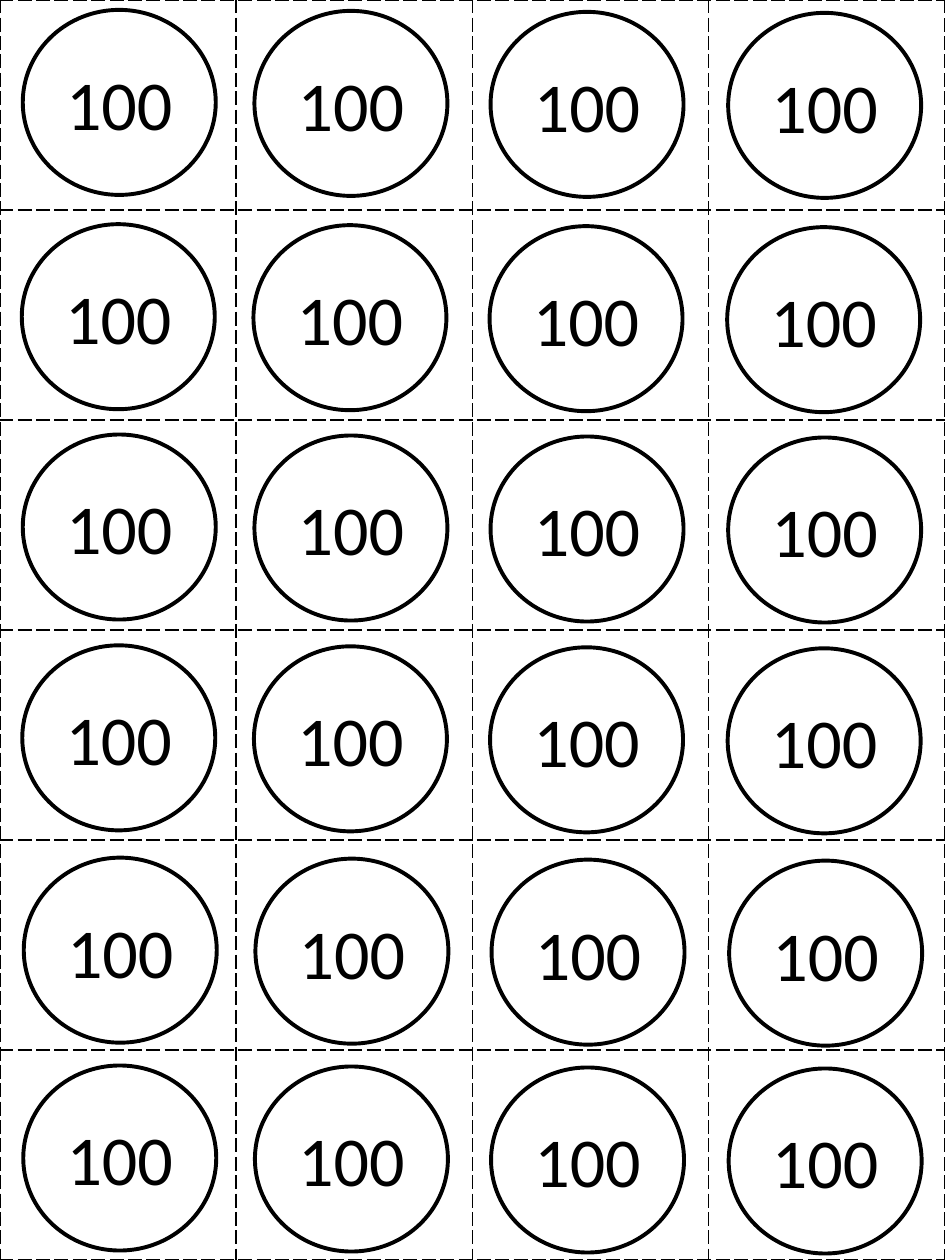
from dataclasses import dataclass
from itertools import product

from lxml.etree import SubElement
from pptx import Presentation
from pptx.dml.color import RGBColor
from pptx.enum.shapes import MSO_SHAPE as Shape
from pptx.enum.text import MSO_ANCHOR as Anchor, PP_ALIGN as Align
from pptx.oxml.ns import qn
from pptx.slide import Slide
from pptx.table import _Cell as Cell
from pptx.util import Cm, Pt


@dataclass(frozen=True)
class Theme:
    ink: str = "000000"
    paper: str = "FFFFFF"
    font: str = "Calibri"
    number_size: float = 40
    outline: float = 2.25
    cut_line: float = 1


@dataclass(frozen=True)
class CounterRow:
    top: float
    nudge: float


THEME = Theme()
PAGE_WIDTH, PAGE_HEIGHT = 19.05, 25.4
COUNTER_WIDTH, COUNTER_HEIGHT = 3.89, 3.73
COLUMN_DROP = 0.02
COLUMN_LEFTS = (0.46, 5.13, 9.89, 14.68)
ROWS = (
    CounterRow(0.2, 0),
    CounterRow(4.52, -0.02),
    CounterRow(8.76, 0),
    CounterRow(13.01, -0.01),
    CounterRow(17.29, 0.02),
    CounterRow(21.48, 0.01),
)


def dash_borders(cell: Cell) -> None:
    properties = cell._tc.get_or_add_tcPr()
    for side in ("lnL", "lnR", "lnT", "lnB"):
        line = SubElement(properties, qn(f"a:{side}"), w=str(Pt(THEME.cut_line)))
        fill = SubElement(line, qn("a:solidFill"))
        SubElement(fill, qn("a:srgbClr"), val=THEME.ink)
        SubElement(line, qn("a:prstDash"), val="lgDash")


def add_cut_grid(page: Slide) -> None:
    grid = page.shapes.add_table(
        len(ROWS), len(COLUMN_LEFTS), 0, 0, Cm(PAGE_WIDTH), Cm(PAGE_HEIGHT)
    ).table
    grid.first_row = False
    grid.horz_banding = False
    for cell in grid.iter_cells():
        dash_borders(cell)
        cell.fill.background()


def add_counter(page: Slide, left: float, top: float, text: str) -> None:
    counter = page.shapes.add_shape(
        Shape.OVAL, Cm(left), Cm(top), Cm(COUNTER_WIDTH), Cm(COUNTER_HEIGHT)
    )
    counter.shadow.inherit = False
    counter.fill.solid()
    counter.fill.fore_color.rgb = RGBColor.from_string(THEME.paper)
    counter.line.color.rgb = RGBColor.from_string(THEME.ink)
    counter.line.width = Pt(THEME.outline)
    frame = counter.text_frame
    frame.vertical_anchor = Anchor.MIDDLE
    para = frame.paragraphs[0]
    para.text = text
    para.alignment = Align.CENTER
    para.font.name = THEME.font
    para.font.size = Pt(THEME.number_size)
    para.font.color.rgb = RGBColor.from_string(THEME.ink)


def main() -> None:
    deck = Presentation()
    deck.slide_width, deck.slide_height = Cm(PAGE_WIDTH), Cm(PAGE_HEIGHT)
    page = deck.slides.add_slide(deck.slide_layouts[6])
    add_cut_grid(page)
    for row, (column, left) in product(ROWS, enumerate(COLUMN_LEFTS)):
        add_counter(page, left + row.nudge, row.top + column * COLUMN_DROP, "100")
    deck.save("out.pptx")


if __name__ == "__main__":
    main()
